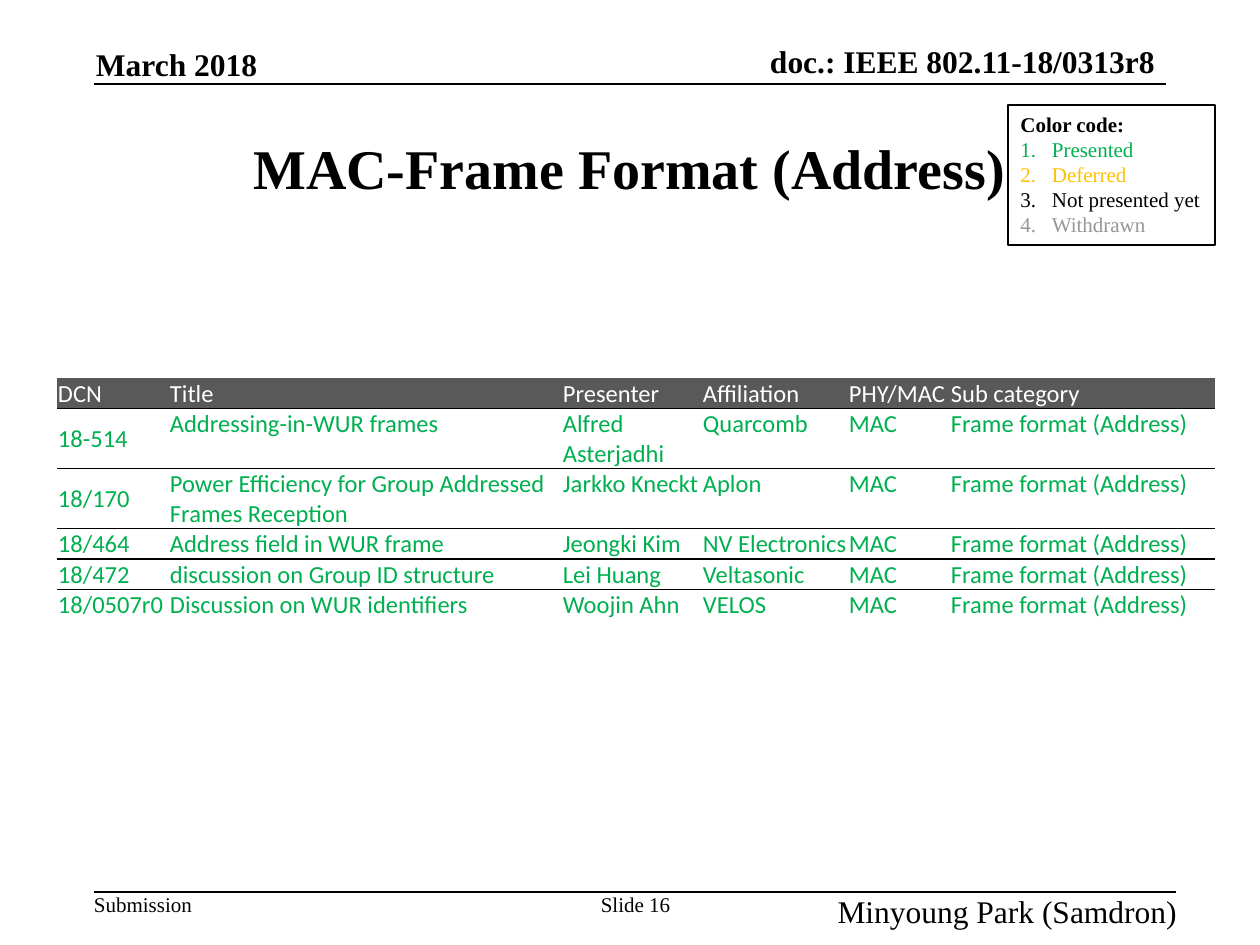
import pptx
import pptx.util
import pptx.dml.color
import pptx.enum.shapes
import pptx.enum.text
import pptx.oxml.ns
import lxml.etree

RGB = pptx.dml.color.RGBColor
ALIGN = pptx.enum.text.PP_ALIGN
ANCHOR = pptx.enum.text.MSO_ANCHOR
PX = 914400 // 126

BLACK = RGB(0, 0, 0)
WHITE = RGB(255, 255, 255)
GREEN = RGB(0x00, 0xB0, 0x50)
AMBER = RGB(0xFF, 0xC0, 0x00)
GREY = RGB(0x96, 0x96, 0x96)
DARK = RGB(0x59, 0x59, 0x59)
SERIF = "Times New Roman"
SANS = "Calibri"
PLAIN = "{2D5ABB26-0587-4C30-8999-92F81FD0307C}"

COLS = [112, 393, 140, 146, 102, 265]
LINE = 30
HEAD = ["DCN", "Title", "Presenter", "Affiliation", "PHY/MAC", "Sub category"]
# Lines of text, DCN, title, presenter, affiliation
DOCS = [
    (2, "18-514", "Addressing-in-WUR frames", "Alfred Asterjadhi", "Quarcomb"),
    (2, "18/170", "Power Efficiency for Group Addressed Frames Reception",
     "Jarkko Kneckt", "Aplon"),
    (1, "18/464", "Address field in WUR frame", "Jeongki Kim", "NV Electronics"),
    (1, "18/472", "discussion on Group ID structure", "Lei Huang", "Veltasonic"),
    (1, "18/0507r0", "Discussion on WUR identifiers", "Woojin Ahn", "VELOS"),
]
STATES = [("Presented", GREEN), ("Deferred", AMBER),
          ("Not presented yet", BLACK), ("Withdrawn", GREY)]


def scale(*nums):
    return [pptx.util.Emu(n * PX) for n in nums]


def add_tag(parent, tag, **attrs):
    return lxml.etree.SubElement(parent, pptx.oxml.ns.qn(tag), attrs)


def add_run(para, text, size, color=BLACK, bold=False, face=SERIF):
    run = para.add_run()
    run.text = text
    font = run.font
    font.name, font.size, font.bold = face, pptx.util.Pt(size), bold
    font.color.rgb = color


def set_pad(frame, side, top):
    frame.margin_left, frame.margin_right = scale(side, side)
    frame.margin_top, frame.margin_bottom = scale(top, top)


def add_title(slide, text):
    title = slide.shapes.title
    title.left, title.top, title.width, title.height = scale(94, 94, 1071, 147)
    frame = title.text_frame
    frame.vertical_anchor = ANCHOR.MIDDLE
    para = frame.paragraphs[0]
    para.alignment = ALIGN.CENTER
    add_run(para, text, 32, bold=True)


def add_label(slide, box, text, size, align=ALIGN.LEFT, head=False):
    """Add header (bold, bottom anchored) or footer text."""
    frame = slide.shapes.add_textbox(*scale(*box)).text_frame
    frame.word_wrap = align == ALIGN.RIGHT
    frame.vertical_anchor = ANCHOR.BOTTOM if head else ANCHOR.TOP
    set_pad(frame, 0, 0)
    para = frame.paragraphs[0]
    para.alignment = align
    add_run(para, text, size, bold=head)


def add_rule(slide, left, right, top):
    kind = pptx.enum.shapes.MSO_CONNECTOR.STRAIGHT
    rule = slide.shapes.add_connector(kind, *scale(left, top, right, top))
    rule.line.color.rgb = BLACK
    rule.line.width = pptx.util.Pt(1)
    add_tag(rule._element.spPr, "a:effectLst")


def add_legend(slide):
    kind = pptx.enum.shapes.MSO_SHAPE.RECTANGLE
    box = slide.shapes.add_shape(kind, *scale(1008, 105, 207, 140))
    box.shadow.inherit = False
    box.fill.background()
    box.line.color.rgb = BLACK
    box.line.width = pptx.util.Pt(0.75)
    frame = box.text_frame
    frame.word_wrap = False
    frame.vertical_anchor = ANCHOR.TOP
    para = frame.paragraphs[0]
    para.alignment = ALIGN.LEFT
    add_run(para, "Color code:", 12, bold=True)
    for text, color in STATES:
        para = frame.add_paragraph()
        para.alignment = ALIGN.LEFT
        props = para._p.get_or_add_pPr()
        props.set("marL", "228600")
        props.set("indent", "-228600")
        add_tag(props, "a:buFont", typeface="+mj-lt")
        add_tag(props, "a:buAutoNum", type="arabicPeriod")
        add_run(para, text, 12, color)


def add_edge(cell):
    """Draw the bottom border of a table cell."""
    edge = add_tag(cell._tc.get_or_add_tcPr(), "a:lnB", w="12700")
    fill = add_tag(edge, "a:solidFill")
    add_tag(fill, "a:srgbClr", val=str(BLACK))


def fill_cell(cell, text, head, first, last):
    set_pad(cell, 1, 0)
    cell.margin_top = scale(1)[0]
    cell.vertical_anchor = ANCHOR.MIDDLE if first else ANCHOR.TOP
    if not last:
        add_edge(cell)
    if head:
        cell.fill.solid()
        cell.fill.fore_color.rgb = DARK
    else:
        cell.fill.background()
    para = cell.text_frame.paragraphs[0]
    add_run(para, text, 14, WHITE if head else GREEN, face=SANS)


def add_docs(slide):
    rows = [HEAD] + [[*doc[1:], "MAC", "Frame format (Address)"] for doc in DOCS]
    highs = [LINE] + [LINE * doc[0] for doc in DOCS]
    box = scale(57, 378, sum(COLS), sum(highs))
    table = slide.shapes.add_table(len(rows), len(COLS), *box).table
    table.first_row = table.horz_banding = False
    table._tbl.tblPr.find(pptx.oxml.ns.qn("a:tableStyleId")).text = PLAIN
    for col, wide in zip(table.columns, scale(*COLS)):
        col.width = wide
    for row, high in zip(table.rows, scale(*highs)):
        row.height = high
    for r, row in enumerate(rows):
        for c, text in enumerate(row):
            fill_cell(table.cell(r, c), text, r == 0, c == 0, r == len(DOCS))


def main():
    deck = pptx.Presentation()
    deck.slide_width, deck.slide_height = scale(1260, 945)
    slide = deck.slides.add_slide(deck.slide_layouts[5])
    add_label(slide, (703, 42, 452, 38), "doc.: IEEE 802.11-18/0313r8", 18,
              ALIGN.RIGHT, head=True)
    add_rule(slide, 94, 1166, 84)
    add_label(slide, (94, 892, 98, 25), "Submission", 12)
    add_rule(slide, 94, 1176, 892)
    add_title(slide, "MAC-Frame Format (Address)")
    add_label(slide, (96, 45, 185, 38), "March 2018", 18, head=True)
    add_label(slide, (798, 892, 379, 25), "Minyoung Park (Samdron)", 18, ALIGN.RIGHT)
    add_label(slide, (599, 892, 73, 25), "Slide 16", 12, ALIGN.CENTER)
    add_legend(slide)
    add_docs(slide)
    deck.save("out.pptx")


if __name__ == "__main__":
    main()
